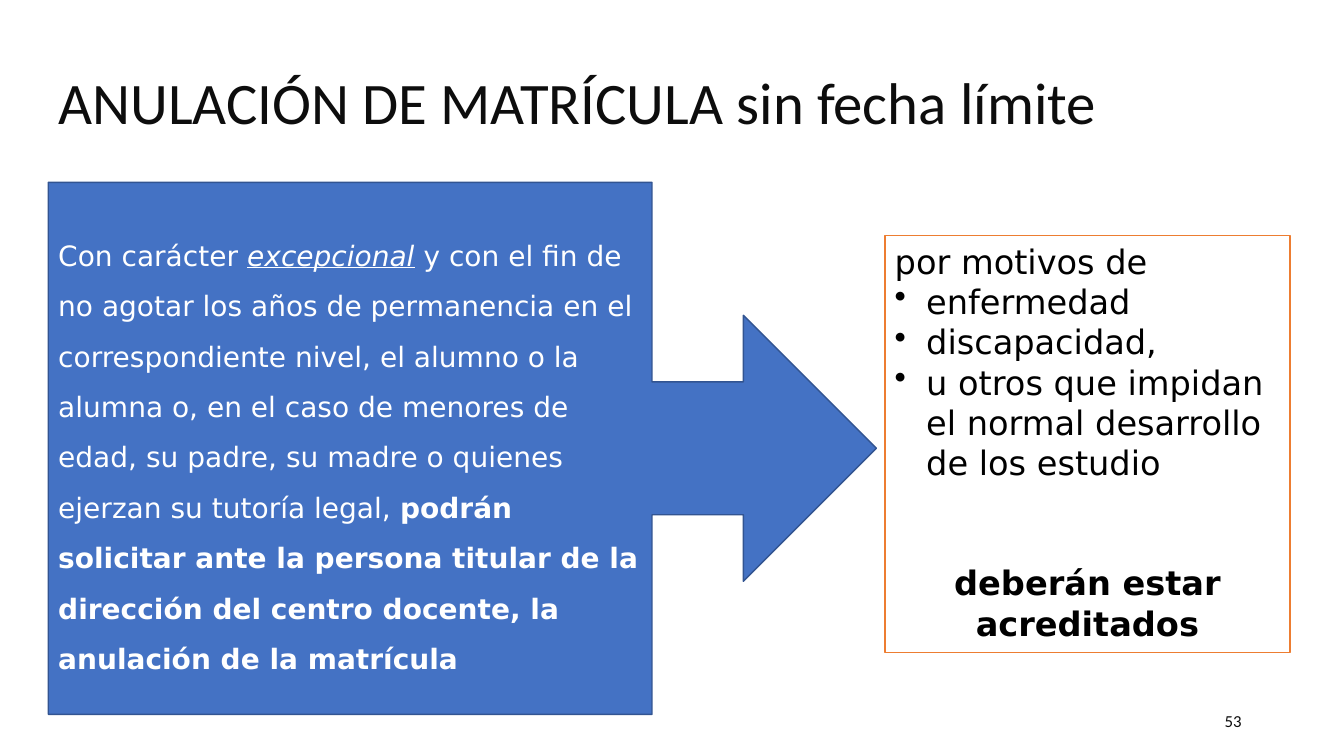
import pptx
import pptx.util
import pptx.dml.color
import pptx.enum.shapes
import pptx.enum.text
import pptx.oxml.ns
import lxml.etree

Pt = pptx.util.Pt
ALIGN = pptx.enum.text.PP_ALIGN
ANCHOR = pptx.enum.text.MSO_ANCHOR
SHAPES = pptx.enum.shapes.MSO_SHAPE

COLORS = {
    "heading": "0D0D0D",
    "callout": "4472C4",
    "callout_line": "325491",
    "reasons_line": "ED7D31",
    "white": "FFFFFF",
    "black": "000000",
}
BODY_FONT = "DejaVu Sans"
REASONS = [
    "enfermedad",
    "discapacidad,",
    "u otros que impidan el normal desarrollo de los estudio",
]


def rgb(name):
    return pptx.dml.color.RGBColor.from_string(COLORS[name])


def set_font(paragraph, name, size, color):
    paragraph.font.name = name
    paragraph.font.size = Pt(size)
    paragraph.font.color.rgb = rgb(color)


def add_bullet(paragraph, indent):
    properties = paragraph._p.get_or_add_pPr()
    properties.set("marL", str(Pt(indent)))
    properties.set("indent", str(-Pt(indent)))
    bullet = lxml.etree.SubElement(properties, pptx.oxml.ns.qn("a:buChar"))
    bullet.set("char", "•")


def add_panel(slide, preset, box, fill, line, anchor):
    shape = slide.shapes.add_shape(preset, *map(Pt, box))
    shape.shadow.inherit = False
    shape.fill.solid()
    shape.fill.fore_color.rgb = rgb(fill)
    shape.line.color.rgb = rgb(line)
    shape.line.width = Pt(1)
    shape.text_frame.word_wrap = True
    shape.text_frame.vertical_anchor = anchor
    return shape


def place_title(slide, box):
    title = slide.shapes.title
    title.left, title.top, title.width, title.height = map(Pt, box)
    frame = title.text_frame
    frame.text = "ANULACIÓN DE MATRÍCULA sin fecha límite"
    frame.auto_size = pptx.enum.text.MSO_AUTO_SIZE.NONE
    frame.vertical_anchor = ANCHOR.MIDDLE
    paragraph = frame.paragraphs[0]
    paragraph.alignment = ALIGN.LEFT
    paragraph.line_spacing = 0.9
    set_font(paragraph, "Calibri", 42, "heading")


def add_request_callout(slide, box):
    callout = add_panel(slide, SHAPES.RIGHT_ARROW_CALLOUT, box,
                        "callout", "callout_line", ANCHOR.MIDDLE)
    for index, value in enumerate([0.25, 0.25, 0.25, 0.729]):
        callout.adjustments[index] = value

    paragraph = callout.text_frame.paragraphs[0]
    paragraph.alignment = ALIGN.LEFT
    paragraph.line_spacing = 1.5
    set_font(paragraph, BODY_FONT, 20, "white")
    paragraph.add_run().text = "Con carácter "
    exceptional = paragraph.add_run()
    exceptional.text = "excepcional"
    exceptional.font.italic = True
    exceptional.font.underline = True
    paragraph.add_run().text = (
        " y con el fin de no agotar los años de permanencia en el "
        "correspondiente nivel, el alumno o la alumna o, en el caso de "
        "menores de edad, su padre, su madre o quienes ejerzan su tutoría "
        "legal, ")
    request = paragraph.add_run()
    request.text = ("podrán solicitar ante la persona titular de la dirección "
                    "del centro docente, la anulación de la matrícula")
    request.font.bold = True


def add_reasons(slide, box):
    panel = add_panel(slide, SHAPES.RECTANGLE, box,
                      "white", "reasons_line", ANCHOR.TOP)
    frame = panel.text_frame
    frame.text = "\n".join(["por motivos de", *REASONS,
                            "deberán estar acreditados"])
    for paragraph in frame.paragraphs:
        paragraph.alignment = ALIGN.LEFT
    for paragraph in frame.paragraphs[1:-1]:
        add_bullet(paragraph, 22.5)
    for paragraph in frame.paragraphs:
        set_font(paragraph, BODY_FONT, 24, "black")

    # Closing requirement, set apart from the list
    requirement = frame.paragraphs[-1]
    requirement.alignment = ALIGN.CENTER
    requirement.space_before = Pt(57)
    requirement.font.bold = True


def add_page_number(slide, box):
    frame = slide.shapes.add_textbox(*map(Pt, box)).text_frame
    frame.word_wrap = True
    frame.vertical_anchor = ANCHOR.MIDDLE
    frame.text = "53"
    frame.paragraphs[0].alignment = ALIGN.RIGHT
    set_font(frame.paragraphs[0], "Calibri", 12, "heading")


def main():
    presentation = pptx.Presentation()
    presentation.slide_width, presentation.slide_height = Pt(960), Pt(540)
    slide = presentation.slides.add_slide(presentation.slide_layouts[5])
    place_title(slide, (34.5, 16, 801.5, 118))
    add_page_number(slide, (678, 500.5, 216, 28.75))
    add_request_callout(slide, (34.5, 130.25, 591.5, 380))
    add_reasons(slide, (632, 168.25, 289.5, 298))
    presentation.save("out.pptx")


if __name__ == "__main__":
    main()
